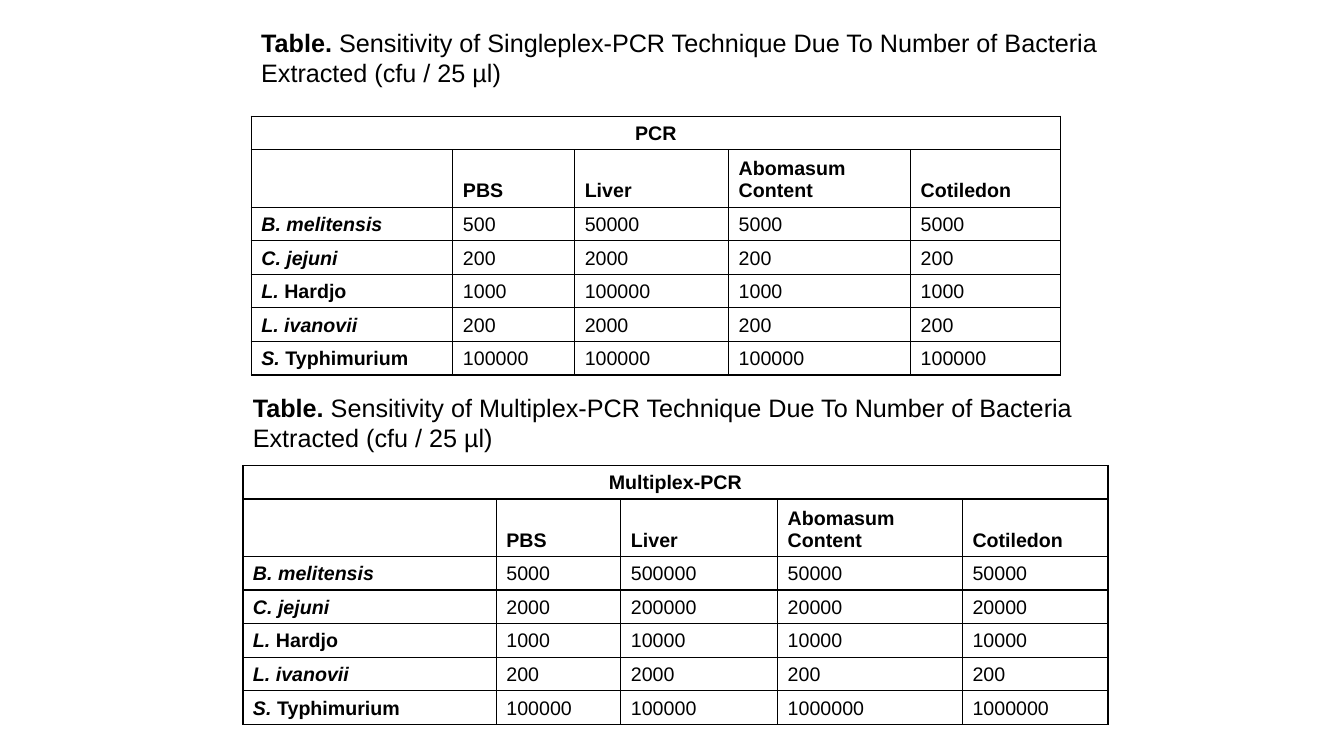
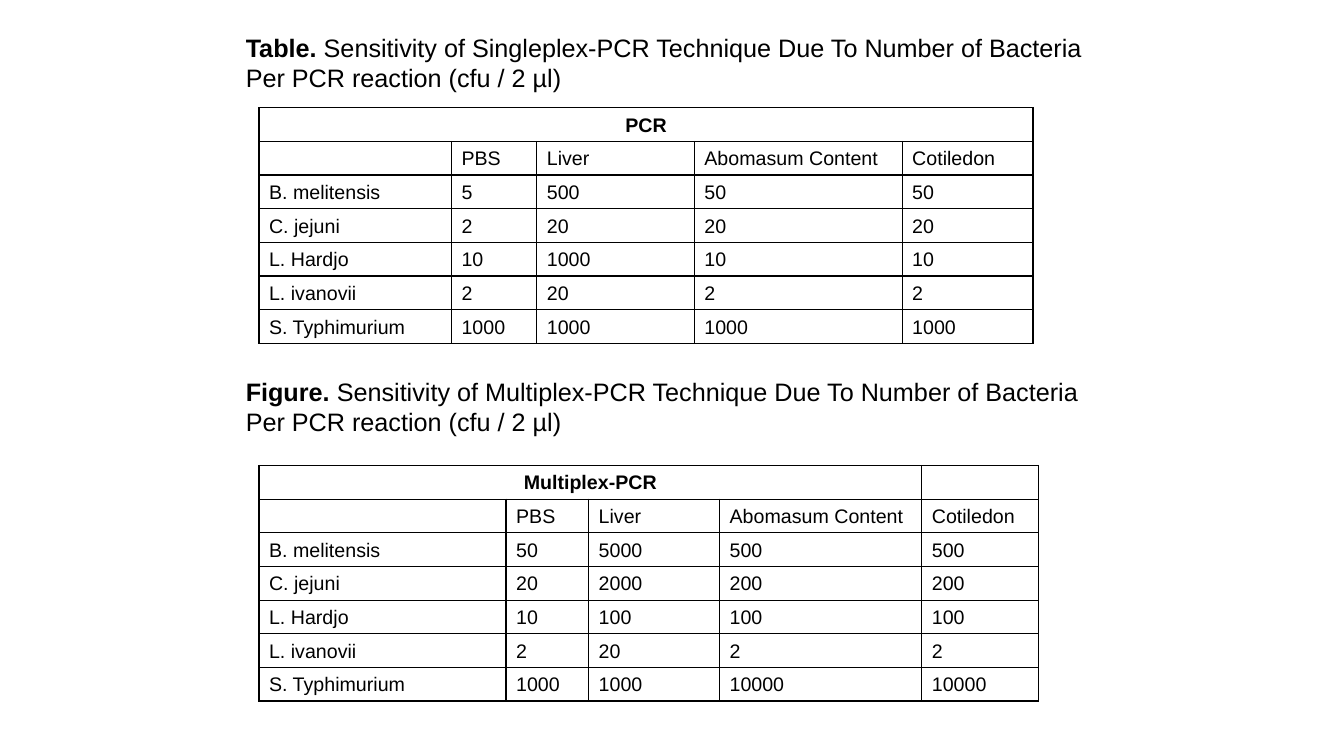
from lxml.etree import SubElement
from pptx import Presentation
from pptx.dml.color import RGBColor as RGB
from pptx.enum.text import MSO_ANCHOR as ANCHOR, PP_ALIGN as ALIGN
from pptx.oxml.ns import qn
from pptx.util import Pt

# Shared style
COLORS = {"text": "000000", "border": "000000"}
CAPTION = {"name": "Arial", "size": Pt(18), "bold": False}
BODY = {"name": "Arial", "size": Pt(14), "bold": False}
HEAD = {**BODY, "bold": True}
CAPTION_W, CAPTION_H = 631, 72
ROW_H = 24

# Shared wording
SAMPLES = ["PBS", "Liver", "Abomasum Content", "Cotiledon"]
BACTERIA = ["B. melitensis", "C. jejuni", "L. Hardjo", "L. ivanovii", "S. Typhimurium"]
EXTRACTED = "Extracted (cfu / 25 µl)"
PER_REACTION = "Per PCR reaction (cfu / 2 µl)"

# Each slide: label style, header row height, then its captioned tables
SLIDES = [
    {"styled": True, "header_h": 41, "unit": EXTRACTED, "tables": [
        {"label": "Table.", "method": "Singleplex", "caption_at": (179.5, 16),
         "title": "PCR", "span": 5, "at": (179.5, 83),
         "cols": [144, 87, 110, 130, 107],
         "values": [[500, 50000, 5000, 5000],
                    [200, 2000, 200, 200],
                    [1000, 100000, 1000, 1000],
                    [200, 2000, 200, 200],
                    [100000, 100000, 100000, 100000]]},
        {"label": "Table.", "method": "Multiplex", "caption_at": (173.5, 276.5),
         "title": "Multiplex-PCR", "span": 5, "at": (173.5, 332.5),
         "cols": [181, 89, 112, 132, 104],
         "values": [[5000, 500000, 50000, 50000],
                    [2000, 200000, 20000, 20000],
                    [1000, 10000, 10000, 10000],
                    [200, 2000, 200, 200],
                    [100000, 100000, 1000000, 1000000]]},
    ]},
    {"styled": False, "header_h": ROW_H, "unit": PER_REACTION, "tables": [
        {"label": "Table.", "method": "Singleplex", "caption_at": (168.5, 19.5),
         "title": "PCR", "span": 5, "at": (185, 77),
         "cols": [137.5, 61, 112.5, 148.5, 93.5],
         "values": [[5, 500, 50, 50],
                    [2, 20, 20, 20],
                    [10, 1000, 10, 10],
                    [2, 20, 2, 2],
                    [1000, 1000, 1000, 1000]]},
        {"label": "Figure.", "method": "Multiplex", "caption_at": (168.5, 265),
         "title": "Multiplex-PCR", "span": 4, "at": (185, 332.5),
         "cols": [176.5, 59, 93.5, 144.5, 83.5],
         "values": [[50, 5000, 500, 500],
                    [20, 2000, 200, 200],
                    [10, 100, 100, 100],
                    [2, 20, 2, 2],
                    [1000, 1000, 10000, 10000]]},
    ]},
]


def add_run(p, text, style, **changes):
    r = p.add_run()
    r.text = text
    for key, value in {**style, **changes}.items():
        setattr(r.font, key, value)
    r.font.color.rgb = RGB.from_string(COLORS["text"])


def add_caption(s, spec_table, unit):
    left, top = spec_table["caption_at"]
    sp = s.shapes.add_textbox(Pt(left), Pt(top), Pt(CAPTION_W), Pt(CAPTION_H))
    tf = sp.text_frame
    tf.word_wrap = True
    tf.vertical_anchor = ANCHOR.TOP
    p = tf.paragraphs[0]
    add_run(p, spec_table["label"] + " ", CAPTION, bold=True)
    add_run(p, f"Sensitivity of {spec_table['method']}-PCR Technique "
               "Due To Number of Bacteria", CAPTION)
    add_run(tf.add_paragraph(), unit, CAPTION)


def format_cell(cell):
    """Thin border on all sides, no fill, text at the bottom."""
    tc_pr = cell._tc.get_or_add_tcPr()
    for side in ("lnL", "lnR", "lnT", "lnB"):
        ln = SubElement(tc_pr, qn(f"a:{side}"), w=str(Pt(1)))
        fill = SubElement(ln, qn("a:solidFill"))
        SubElement(fill, qn("a:srgbClr"), val=COLORS["border"])
    cell.fill.background()
    cell.vertical_anchor = ANCHOR.BOTTOM
    # Keeps empty cells as low as filled ones
    SubElement(cell.text_frame.paragraphs[0]._p, qn("a:endParaRPr"), sz="1400")


def add_bacterium(p, name, styled):
    """Styled names are bold, with genus and lower-case species in italics."""
    if not styled:
        add_run(p, name, BODY)
        return
    genus, species = name.split()
    add_run(p, genus + " ", HEAD, italic=True)
    add_run(p, species, HEAD, italic=species.islower())


def add_result_table(s, spec_table, styled, header_h):
    cols = spec_table["cols"]
    heights = [ROW_H, header_h] + [ROW_H] * len(BACTERIA)
    left, top = spec_table["at"]
    frame = s.shapes.add_table(len(heights), len(cols), Pt(left), Pt(top),
                               Pt(sum(cols)), Pt(sum(heights)))
    table = frame.table
    table.first_row = table.horz_banding = False
    for col, width in zip(table.columns, cols):
        col.width = Pt(width)
    for row, height in zip(table.rows, heights):
        row.height = Pt(height)
    for cell in table.iter_cells():
        format_cell(cell)

    def paragraph(row, col):
        return table.cell(row, col).text_frame.paragraphs[0]

    # Title row
    table.cell(0, 0).merge(table.cell(0, spec_table["span"] - 1))
    p = paragraph(0, 0)
    p.alignment = ALIGN.CENTER
    add_run(p, spec_table["title"], HEAD)

    # Sample names, then one row for each bacterium
    for c, sample in enumerate(SAMPLES, 1):
        add_run(paragraph(1, c), sample, HEAD if styled else BODY)
    for r, (name, values) in enumerate(zip(BACTERIA, spec_table["values"]), 2):
        add_bacterium(paragraph(r, 0), name, styled)
        for c, value in enumerate(values, 1):
            add_run(paragraph(r, c), str(value), BODY)


def main():
    prs = Presentation()
    prs.slide_width, prs.slide_height = Pt(960), Pt(540)
    for content in SLIDES:
        s = prs.slides.add_slide(prs.slide_layouts[6])
        for item in content["tables"]:
            add_result_table(s, item, content["styled"], content["header_h"])
        for item in content["tables"]:
            add_caption(s, item, content["unit"])
    prs.save("out.pptx")


if __name__ == "__main__":
    main()
